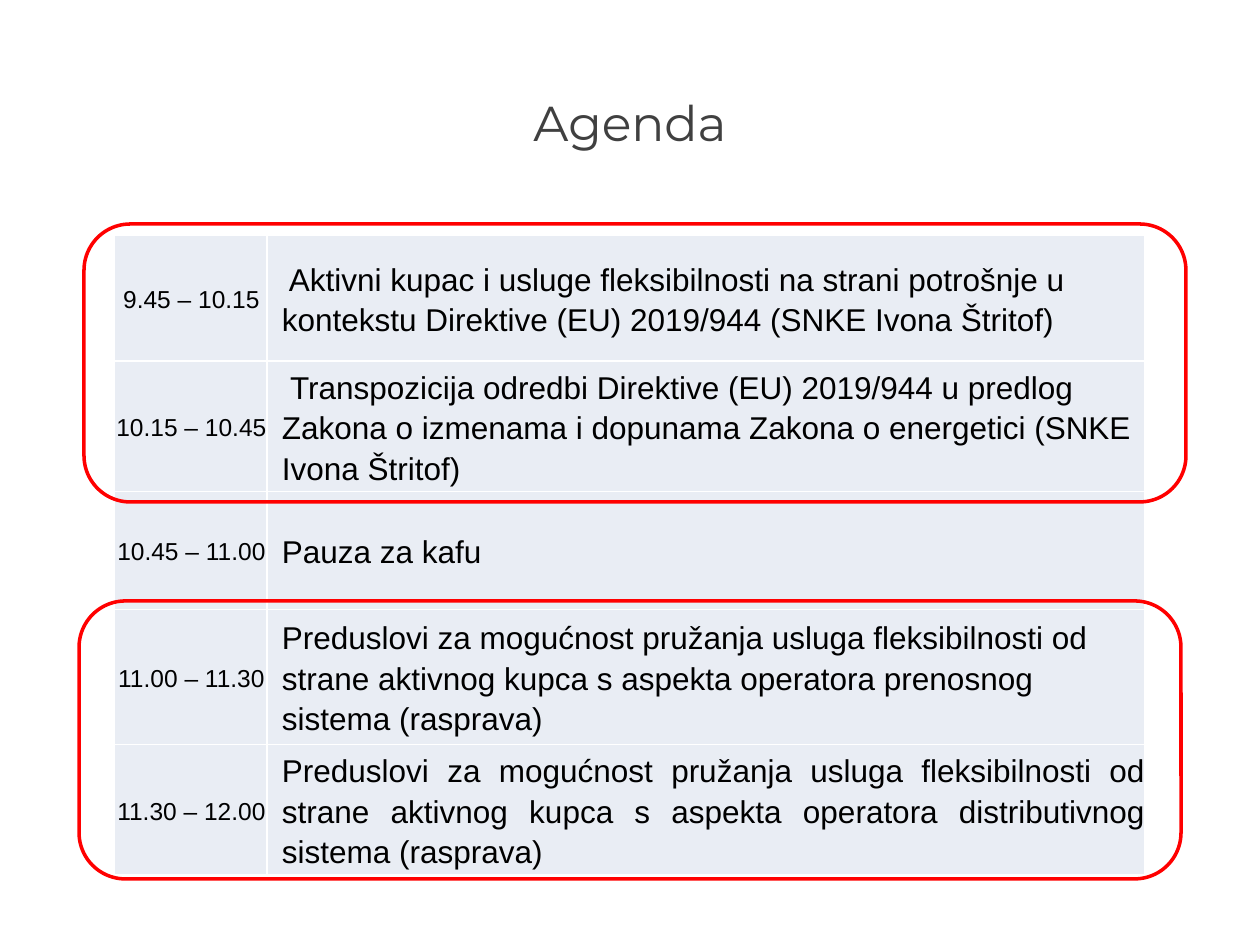
from lxml.etree import SubElement as Sub
from pptx import Presentation
from pptx.dml.color import RGBColor
from pptx.enum.shapes import MSO_SHAPE as Shape
from pptx.enum.text import MSO_ANCHOR as Anchor, PP_ALIGN as Align
from pptx.oxml.ns import qn
from pptx.util import Pt

TITLE = "Agenda"
AGENDA = [
    ("9.45 – 10.15", " Aktivni kupac i usluge fleksibilnosti na strani potrošnje u kontekstu Direktive (EU) 2019/944 (SNKE Ivona Štritof)", Align.LEFT, 126),
    ("10.15 – 10.45", " Transpozicija odredbi Direktive (EU) 2019/944 u predlog Zakona o izmenama i dopunama Zakona o energetici (SNKE Ivona Štritof)", Align.LEFT, 126),
    ("10.45 – 11.00", "Pauza za kafu", Align.LEFT, 118),
    ("11.00 – 11.30", "Preduslovi za mogućnost pružanja usluga fleksibilnosti od strane aktivnog kupca s aspekta operatora prenosnog sistema (rasprava)", Align.LEFT, 135),
    ("11.30 – 12.00", "Preduslovi za mogućnost pružanja usluga fleksibilnosti od strane aktivnog kupca s aspekta operatora distributivnog sistema (rasprava)", Align.JUSTIFY, 127),
]
COLS = [153, 878]
FRAMES = [(84, 224), (79, 601)]


def px(n):
    return round(n * 914400 / 126)


def color(code):
    return RGBColor.from_string(code)


def write(para, text, size, font, code, align):
    para.alignment = align
    run = para.add_run()
    run.text = text
    run.font.size = Pt(size)
    run.font.name = font
    run.font.bold = False
    run.font.color.rgb = color(code)


def border(cell, code):
    props = cell._tc.get_or_add_tcPr()
    for i, side in enumerate(("lnL", "lnR", "lnT", "lnB")):
        line = props.makeelement(qn("a:" + side), {"w": str(Pt(1))})
        fill = Sub(line, qn("a:solidFill"))
        Sub(fill, qn("a:srgbClr"), val=code)
        props.insert(i, line)


def fill_cell(cell, text, size, align, after, indent):
    cell.fill.solid()
    cell.fill.fore_color.rgb = color("E9EDF4")
    cell.vertical_anchor = Anchor.MIDDLE
    cell.margin_left = px(2)
    cell.margin_right = cell.margin_top = cell.margin_bottom = 0
    border(cell, "FFFFFF")
    para = cell.text_frame.paragraphs[0]
    para.line_spacing = 1.15
    para.space_after = Pt(after)
    if indent:
        props = para._p.get_or_add_pPr()
        props.set("marL", str(px(indent)))
        props.set("indent", "0")
    write(para, text, size, "Arial", "000000", align)


def main():
    deck = Presentation()
    deck.slide_width, deck.slide_height = px(1260), px(945)
    shapes = deck.slides.add_slide(deck.slide_layouts[6]).shapes

    title = shapes.add_textbox(px(63), px(84), px(1134), px(110)).text_frame
    title.word_wrap = True
    title.margin_top = px(9)
    write(title.paragraphs[0], TITLE, 28, "Montserrat", "404040", Align.CENTER)

    high = sum(row[3] for row in AGENDA)
    table = shapes.add_table(len(AGENDA), len(COLS), px(114), px(235), px(sum(COLS)), px(high)).table
    table.first_row = table.horz_banding = False
    for col, wide in zip(table.columns, COLS):
        col.width = px(wide)
    for row, (time, topic, align, tall) in zip(table.rows, AGENDA):
        row.height = px(tall)
        fill_cell(row.cells[0], time, 14, Align.CENTER, 6, 0)
        fill_cell(row.cells[1], topic, 18, align, 10, 13)

    for left, top in FRAMES:
        frame = shapes.add_shape(Shape.ROUNDED_RECTANGLE, px(left), px(top), px(1102), px(278))
        frame.shadow.inherit = False
        frame.fill.background()
        frame.line.color.rgb = color("FF0000")
        frame.line.width = Pt(2)

    deck.save("out.pptx")


if __name__ == "__main__":
    main()
